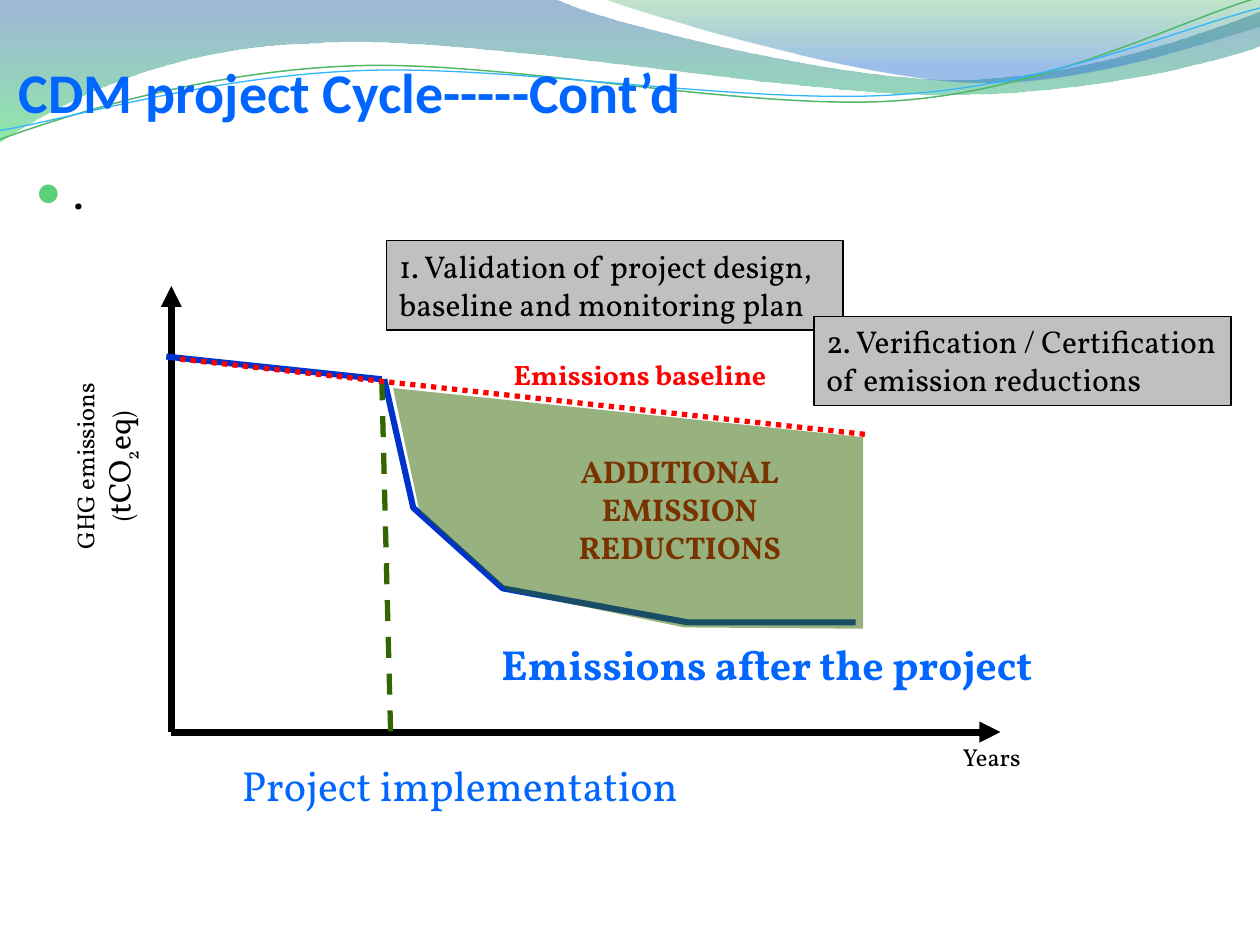
from dataclasses import dataclass
from typing import NamedTuple, Optional

from lxml import etree
from pptx import Presentation
from pptx.dml.color import RGBColor
from pptx.enum import dml, shapes, text
from pptx.oxml import ns
from pptx.util import Inches, Pt

BLACK = RGBColor(0x00, 0x00, 0x00)
GREY = RGBColor(0xC0, 0xC0, 0xC0)
RED = RGBColor(0xFF, 0x00, 0x00)
DARK_RED = RGBColor(0xC0, 0x00, 0x00)
BRIGHT_BLUE = RGBColor(0x00, 0x66, 0xFF)
EMISSION_BLUE = RGBColor(0x00, 0x33, 0xCC)
FOREST = RGBColor(0x33, 0x66, 0x00)
BULLET_GREEN = RGBColor(0x5B, 0xD0, 0x78)
WAVE_GREEN = RGBColor(0x50, 0xB8, 0x6A)
WAVE_BLUE = RGBColor(0x31, 0xB6, 0xFD)
BODY_FONT = "Vollkorn"
LEFT, CENTER, RIGHT = text.PP_ALIGN.LEFT, text.PP_ALIGN.CENTER, text.PP_ALIGN.RIGHT


class Stop(NamedTuple):
    position: float
    color: RGBColor
    opacity: int


class Piece(NamedTuple):
    words: str
    size: float
    baseline: int = 0


@dataclass
class Stroke:
    color: RGBColor
    width: float
    dash: Optional[dml.MSO_LINE] = None
    arrow: bool = False


@dataclass
class Label:
    box: tuple
    lines: list
    color: RGBColor = BLACK
    bold: bool = False
    align: text.PP_ALIGN = CENTER
    rotation: float = 0
    boxed: bool = False


def add_xml(parent, tag: str, **attributes):
    return etree.SubElement(parent, ns.qn(tag), attributes)


def set_opacity(fill_element, percent: int) -> None:
    for color in fill_element.iter(ns.qn("a:srgbClr")):
        add_xml(color, "a:alpha", val=str(percent * 1000))


def format_font(font, **values) -> None:
    font.color.rgb = values.pop("color")
    for name, value in values.items():
        setattr(font, name, value)


def place(shape, box: tuple) -> None:
    for name, value in zip(("left", "top", "width", "height"), box):
        setattr(shape, name, Inches(value))


def apply_stroke(line, stroke: Stroke) -> None:
    line.color.rgb = stroke.color
    line.width = Pt(stroke.width)
    if stroke.dash:
        line.dash_style = stroke.dash


def draw_outline(slide, steps: list, close: bool):
    """Join steps: (x, y) is a line; two control points and an end are a curve."""
    corners = [tuple(map(Inches, step[-2:])) for step in steps]
    builder = slide.shapes.build_freeform(*corners[0])
    builder.add_line_segments(corners[1:], close=close)
    shape = builder.convert_to_shape()
    shape.shadow.inherit = False
    segments = list(shape._element.iter(ns.qn("a:lnTo")))
    for segment, step in zip(segments, steps[1:]):
        if len(step) == 6:
            bend = etree.Element(ns.qn("a:cubicBezTo"))
            for x, y in zip(step[::2], step[1::2]):
                add_xml(bend, "a:pt", x=str(Inches(x) - shape.left),
                        y=str(Inches(y) - shape.top))
            segment.getparent().replace(segment, bend)
    return shape


def draw_open(slide, steps: list, stroke: Stroke, rotation: float = 0) -> None:
    shape = draw_outline(slide, steps, close=False)
    shape.rotation = rotation
    shape.fill.background()
    apply_stroke(shape.line, stroke)


def draw_gradient(slide, steps: list, stops: tuple) -> None:
    shape = draw_outline(slide, steps, close=True)
    shape.line.fill.background()
    shape.fill.gradient()
    shape.fill.gradient_angle = 270
    for target, stop in zip(shape.fill.gradient_stops, stops):
        target.color.rgb = stop.color
        target.position = stop.position
    for element, stop in zip(shape._element.iter(ns.qn("a:gs")), stops):
        set_opacity(element, stop.opacity)


def draw_line(slide, start: tuple, end: tuple, stroke: Stroke) -> None:
    line = slide.shapes.add_connector(shapes.MSO_CONNECTOR.STRAIGHT,
                                      *map(Inches, start + end))
    apply_stroke(line.line, stroke)
    if stroke.arrow:
        add_xml(line.line._get_or_add_ln(), "a:tailEnd", type="triangle")
    add_xml(line._element.spPr, "a:effectLst")


def draw_label(slide, label: Label) -> None:
    box = map(Inches, label.box)
    if label.boxed:
        shape = slide.shapes.add_shape(shapes.MSO_SHAPE.RECTANGLE, *box)
        shape.shadow.inherit = False
        shape.fill.solid()
        shape.fill.fore_color.rgb = GREY
        apply_stroke(shape.line, Stroke(BLACK, 0.75))
    else:
        shape = slide.shapes.add_textbox(*box)
    shape.rotation = label.rotation
    frame = shape.text_frame
    frame.word_wrap = True
    frame.vertical_anchor = text.MSO_ANCHOR.TOP
    paragraph = frame.paragraphs[0]
    paragraph.alignment = label.align
    for number, pieces in enumerate(label.lines):
        if number:
            paragraph.add_line_break()
        for piece in pieces:
            run = paragraph.add_run()
            run.text = piece.words
            format_font(run.font, name=BODY_FONT, size=Pt(piece.size),
                        bold=label.bold, color=label.color)
            if piece.baseline:
                run.font._element.set("baseline", str(piece.baseline * 1000))


def draw_waves(slide) -> None:
    draw_gradient(slide, [(0, 0), (4.4, -0.01), (4.76, 0.17, 6.64, 0.63, 7.58, 0.63),
                          (8.53, 0.63, 9.58, 0.26, 10, 0.09), (10.01, 0.36),
                          (9.83, 0.44, 8.7, 0.76, 7.46, 0.75),
                          (6.22, 0.75, 3.82, 0.28, 2.57, 0.34),
                          (1.29, 0.36, 0.46, 0.83, -0.01, 1.13)],
                  (Stop(0, RGBColor(0x29, 0x60, 0xA7), 45),
                   Stop(1, RGBColor(0x35, 0xDA, 0x5E), 55)))
    draw_gradient(slide, [(4.79, -0.01), (5.09, 0.11, 6.82, 0.62, 7.69, 0.65),
                          (8.56, 0.69, 9.61, 0.32, 10, 0.21), (10, 0)],
                  (Stop(0, RGBColor(0x36, 0xA7, 0x52), 30),
                   Stop(0.8, RGBColor(0x24, 0x72, 0xD3), 45)))
    draw_open(slide, [(-0.02, 0.87), (0.47, 0.72, 1.58, 0.41, 2.78, 0.42),
                      (3.96, 0.42, 5.91, 0.93, 7.12, 0.9),
                      (8.32, 0.87, 9.4, 0.36, 10, 0.22)],
              Stroke(WAVE_GREEN, 0.85), rotation=357.3)
    draw_open(slide, [(-0.02, 0.8), (0.46, 0.75, 1.64, 0.45, 2.83, 0.46),
                      (4.03, 0.46, 5.96, 0.89, 7.16, 0.85),
                      (8.35, 0.83, 9.42, 0.42, 10.02, 0.3)],
              Stroke(WAVE_BLUE, 0.75), rotation=357.3)


def fill_placeholders(slide) -> None:
    title, body = slide.shapes.title, slide.placeholders[1]
    for holder in (title, body):
        slide.shapes._spTree.append(holder._element)  # in front of the waves
    place(title, (0.15, 0.24, 9, 0.75))
    frame = title.text_frame
    frame.text = "CDM project Cycle-----Cont’d"
    for name, value in {"margin_left": 0, "margin_right": 0, "margin_bottom": 0,
                        "vertical_anchor": text.MSO_ANCHOR.BOTTOM}.items():
        setattr(frame, name, value)
    frame.paragraphs[0].alignment = LEFT
    format_font(frame.paragraphs[0].runs[0].font, name="Calibri", size=Pt(32),
                bold=True, color=BRIGHT_BLUE)

    place(body, (0.18, 1.25, 9.82, 6.25))
    body.text_frame.text = "."
    paragraph = body.text_frame.paragraphs[0]
    paragraph.space_before = Pt(5.2)
    format_font(paragraph.runs[0].font, name=BODY_FONT, size=Pt(26), color=BLACK)
    properties = paragraph._p.get_or_add_pPr()
    properties.set("marL", str(Inches(0.3)))
    properties.set("indent", str(-Inches(0.3)))
    add_xml(add_xml(properties, "a:buClr"), "a:srgbClr", val=str(BULLET_GREEN))
    add_xml(properties, "a:buSzPct", val="95000")
    add_xml(properties, "a:buChar", char="●")


def draw_emissions(slide) -> None:
    origin, turn = (1.36, 5.81), (3.03, 3.01)
    for end in ((1.36, 2.27), (7.94, 5.81)):
        draw_line(slide, origin, end, Stroke(BLACK, 4, arrow=True))
    emissions = Stroke(EMISSION_BLUE, 3.5)
    draw_line(slide, (1.32, 2.83), turn, emissions)
    draw_open(slide, [(3.05, 3.01), (3.28, 4.03), (3.99, 4.67),
                      (5.46, 4.94), (6.79, 4.94)], emissions)
    draw_label(slide, Label((3.99, 3.54, 2.81, 1),
                            [[Piece(word, 18)] for word in
                             ("ADDITIONAL", "EMISSION", "REDUCTIONS")],
                            DARK_RED, bold=True))
    area = draw_outline(slide, [(3.12, 3.08), (3.33, 4.06), (4.03, 4.69), (5.43, 4.98),
                                (6.85, 4.99), (6.85, 3.47)], close=True)
    area.line.fill.background()
    area.fill.solid()
    area.fill.fore_color.rgb = FOREST
    set_opacity(area._element.spPr, 50)
    for label in (
        Label((3.17, 5.02, 5.12, 0.5), [[Piece("Emissions after the project", 24)]],
              BRIGHT_BLUE, bold=True, align=RIGHT),
        Label((3.8, 2.79, 2.38, 0.37), [[Piece("Emissions baseline", 16)]],
              RED, bold=True, align=RIGHT),
        Label((3.07, 1.91, 3.62, 0.71),
              [[Piece("1. Validation of project design, baseline and monitoring plan", 18)]],
              align=LEFT, boxed=True),
        Label((6.46, 2.51, 3.31, 0.71),
              [[Piece("2. Verification / Certification of emission reductions", 18)]],
              align=LEFT, boxed=True),
        Label((-0.24, 3.38, 2.13, 0.64),
              [[Piece("GHG emissions", 14)],
               [Piece("(", 14), Piece("tCO", 18), Piece("2", 18, -25),
                Piece("eq", 18), Piece(")", 14)]], rotation=270),
        Label((1.67, 5.98, 3.96, 0.5), [[Piece("Project implementation", 24)]], BRIGHT_BLUE),
        Label((6.85, 5.84, 2.04, 0.33), [[Piece("Years", 14)]]),
    ):
        draw_label(slide, label)
    draw_line(slide, turn, (3.1, 5.81), Stroke(FOREST, 3, dml.MSO_LINE.DASH))
    draw_line(slide, (1.43, 2.85), (6.89, 3.45), Stroke(RED, 3, dml.MSO_LINE.ROUND_DOT))


def main() -> None:
    deck = Presentation()
    deck.slide_width, deck.slide_height = Inches(10), Inches(7.5)
    slide = deck.slides.add_slide(deck.slide_layouts[1])
    draw_waves(slide)
    fill_placeholders(slide)
    draw_emissions(slide)
    deck.save("out.pptx")


if __name__ == "__main__":
    main()
